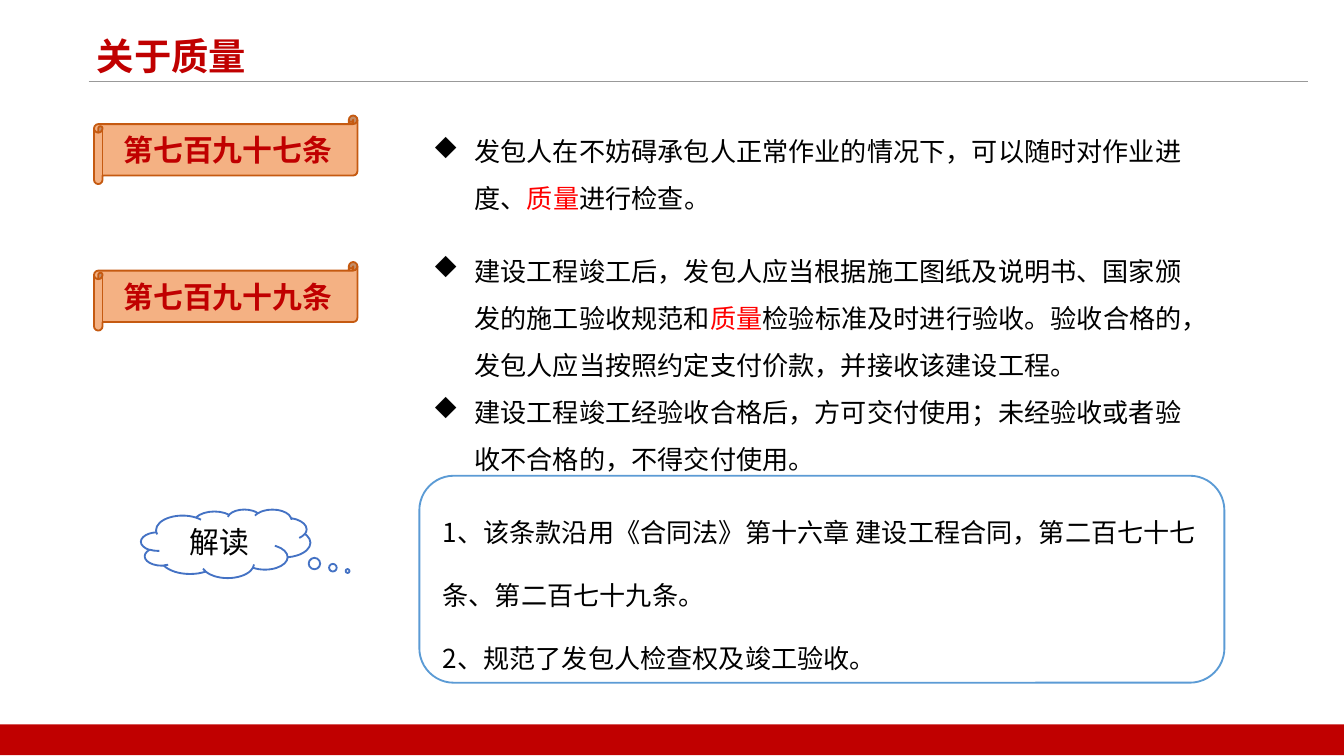
from lxml.etree import SubElement
from pptx import Presentation
from pptx.dml.color import RGBColor
from pptx.enum.shapes import MSO_CONNECTOR, MSO_SHAPE
from pptx.enum.text import MSO_ANCHOR, MSO_AUTO_SIZE, PP_ALIGN
from pptx.oxml.ns import qn
from pptx.util import Inches, Pt

FONT = "Noto Sans CJK SC"
DARK_RED, RED, BLACK, WHITE = "C00000", "FF0000", "000000", "FFFFFF"
KEYWORD = "质量"


def color(hex_string):
    """Turn a hex string into a colour."""
    return RGBColor.from_string(hex_string)


def place(shape, left, top, width, height):
    """Move and size a shape in inches."""
    shape.left, shape.top = Inches(left), Inches(top)
    shape.width, shape.height = Inches(width), Inches(height)


def format_paragraph(paragraph, size, hex_string=BLACK, bold=False,
                     align=PP_ALIGN.LEFT, line_spacing=1.0):
    """Set the alignment, spacing and font of a paragraph."""
    paragraph.alignment = align
    paragraph.line_spacing = line_spacing
    paragraph.space_before = Pt(0)
    font = paragraph.font
    font.size, font.bold, font.name = Pt(size), bold, FONT
    font.color.rgb = color(hex_string)
    defaults = paragraph._p.get_or_add_pPr().find(qn("a:defRPr"))
    SubElement(defaults, qn("a:ea"), typeface=FONT)


def add_bullet(paragraph):
    """Give a paragraph a Wingdings diamond bullet with a hanging indent."""
    properties = paragraph._p.get_or_add_pPr()
    properties.set("marL", str(Inches(0.31)))
    properties.set("indent", str(-Inches(0.31)))
    SubElement(properties, qn("a:buFont"), typeface="Wingdings", charset="2")
    SubElement(properties, qn("a:buChar"), char="u")


def add_keyword_runs(paragraph, text):
    """Write text with the keyword in red."""
    for index, part in enumerate(text.split(KEYWORD)):
        if index:
            run = paragraph.add_run()
            run.text = KEYWORD
            run.font.color.rgb = color(RED)
        paragraph.add_run().text = part


def fill_title(title, text):
    """Write the slide title."""
    place(title, 0.62, 0.2, 3.25, 0.51)
    frame = title.text_frame
    frame.auto_size = MSO_AUTO_SIZE.NONE
    frame.vertical_anchor = MSO_ANCHOR.TOP
    frame.text = text
    format_paragraph(frame.paragraphs[0], 20, DARK_RED, True)


def fill_clauses(body, top, height, clauses):
    """Write a bulleted list of clauses."""
    place(body, 3.12, top, 5.94, height)
    frame = body.text_frame
    frame.auto_size = MSO_AUTO_SIZE.NONE
    frame.vertical_anchor = MSO_ANCHOR.TOP
    for index, clause in enumerate(clauses):
        paragraph = frame.add_paragraph() if index else frame.paragraphs[0]
        add_bullet(paragraph)
        add_keyword_runs(paragraph, clause)
        format_paragraph(paragraph, 14, line_spacing=1.5)


def add_box(slide, kind, box, fill=None, line=None):
    """Add a preset shape with an optional fill and outline."""
    shape = slide.shapes.add_shape(kind, *map(Inches, box))
    shape.shadow.inherit = False
    if fill:
        shape.fill.solid()
        shape.fill.fore_color.rgb = color(fill)
    else:
        shape.fill.background()
    if line:
        shape.line.color.rgb = color(line)
        shape.line.width = Pt(1)
    else:
        shape.line.fill.background()
    return shape


def write_lines(shape, lines, size, **style):
    """Write vertically centred lines into a shape."""
    frame = shape.text_frame
    frame.word_wrap = True
    frame.vertical_anchor = MSO_ANCHOR.MIDDLE
    frame.text = "\n".join(lines)
    for paragraph in frame.paragraphs:
        format_paragraph(paragraph, size, **style)


def add_scroll(slide, top, label):
    """Add a scroll that names an article."""
    scroll = add_box(slide, MSO_SHAPE.HORIZONTAL_SCROLL,
                     (0.7, top, 1.96, 0.51), "F4B183", "C55A11")
    write_lines(scroll, [label], 16, hex_string=DARK_RED, bold=True,
                align=PP_ALIGN.CENTER)


def add_rule(slide):
    """Add the thin line under the title."""
    rule = slide.shapes.add_connector(
        MSO_CONNECTOR.STRAIGHT, Inches(0.66), Inches(0.61), Inches(9.73), Inches(0.61))
    rule.line.color.rgb = color("999999")
    rule.line.width = Pt(0.5)
    SubElement(rule._element.spPr, qn("a:effectLst"))


def main():
    """Build the slide and save it."""
    presentation = Presentation()
    presentation.slide_width = Inches(10)
    presentation.slide_height = presentation.slide_width * 9 // 16
    slide = presentation.slides.add_slide(presentation.slide_layouts[3])
    slide.background.fill.solid()
    slide.background.fill.fore_color.rgb = color(WHITE)
    title, inspection, acceptance = slide.placeholders

    add_rule(slide)
    fill_title(title, "关于质量")
    add_box(slide, MSO_SHAPE.RECTANGLE, (0, 5.39, 10, 0.23), DARK_RED)

    add_scroll(slide, 0.86, "第七百九十七条")
    fill_clauses(inspection, 0.84, 0.75, [
        "发包人在不妨碍承包人正常作业的情况下，可以随时对作业进度、质量进行检查。"])
    add_scroll(slide, 1.95, "第七百九十九条")
    fill_clauses(acceptance, 1.73, 1.81, [
        "建设工程竣工后，发包人应当根据施工图纸及说明书、国家颁发的施工验收规范和"
        "质量检验标准及时进行验收。验收合格的，发包人应当按照约定支付价款，并接收该建设工程。",
        "建设工程竣工经验收合格后，方可交付使用；未经验收或者验收不合格的，不得交付使用。"])

    cloud = add_box(slide, MSO_SHAPE.CLOUD_CALLOUT, (1.05, 3.79, 1.26, 0.51),
                    WHITE, "4472C4")
    cloud.adjustments[0], cloud.adjustments[1] = 0.72, 0.4
    write_lines(cloud, ["解读"], 16, align=PP_ALIGN.CENTER)
    notes = add_box(slide, MSO_SHAPE.ROUNDED_RECTANGLE, (3.12, 3.54, 5.99, 1.54),
                    line="5B9BD5")
    write_lines(notes, [
        "1、该条款沿用《合同法》第十六章 建设工程合同，第二百七十七条、第二百七十九条。",
        "2、规范了发包人检查权及竣工验收。"], 14, line_spacing=2.0)
    presentation.save("out.pptx")


if __name__ == "__main__":
    main()
